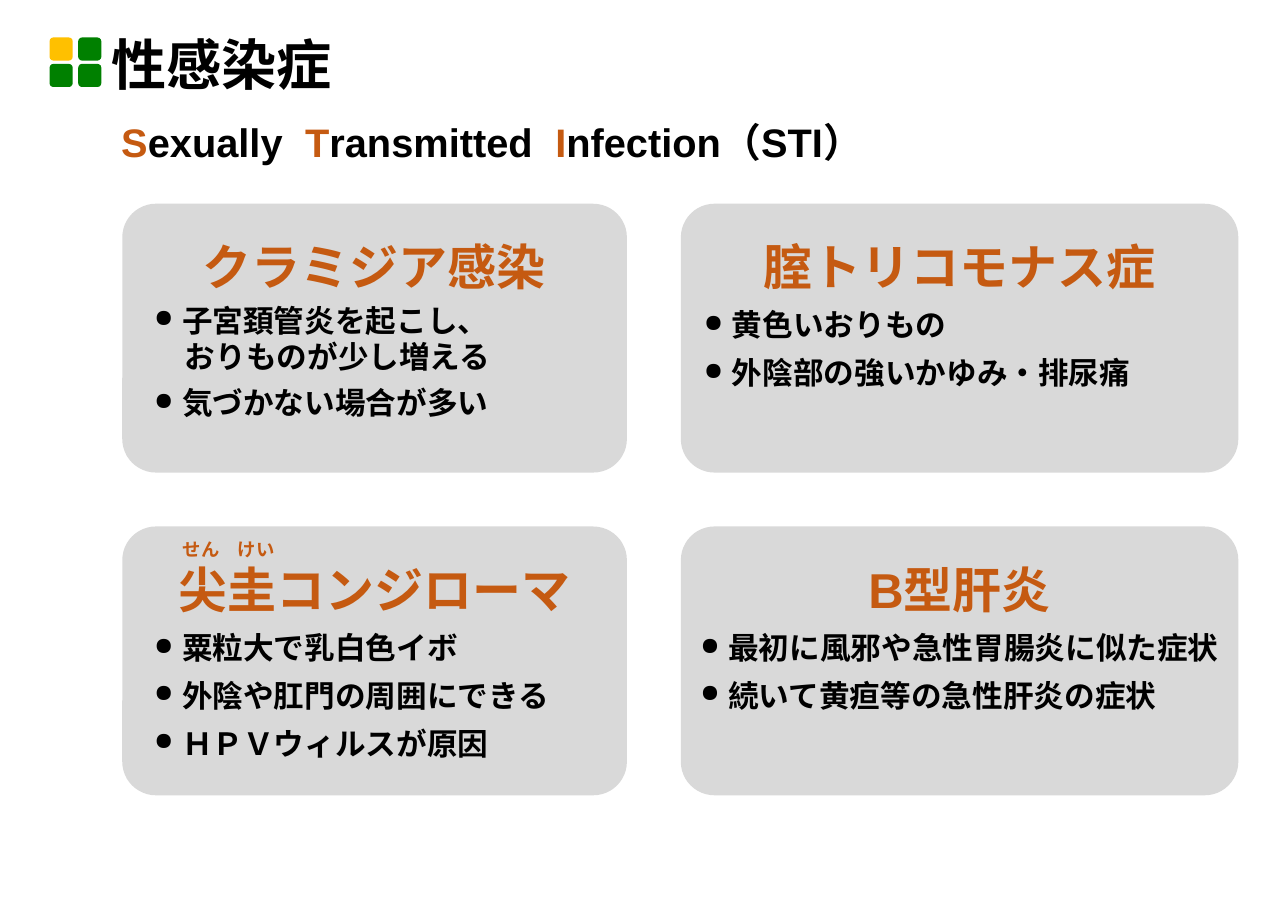
from dataclasses import dataclass

from lxml.etree import SubElement
from pptx import Presentation
from pptx.dml.color import RGBColor
from pptx.enum.shapes import MSO_SHAPE as Shape
from pptx.enum.text import MSO_ANCHOR as Anchor, MSO_AUTO_SIZE as Fit, PP_ALIGN as Align
from pptx.oxml.ns import qn
from pptx.util import Inches, Pt


@dataclass(frozen=True)
class Theme:
    ink: str = "000000"
    accent: str = "C55A11"
    card: str = "D9D9D9"
    gold: str = "FFC000"
    green: str = "008000"
    font: str = "Arial"
    kanji: str = "Noto Sans CJK JP"
    title: int = 36
    head: int = 32
    lead: int = 26
    item: int = 20
    ruby: int = 12


THEME = Theme()
ROWS = (1.85, 4.78)
# left, width and side inset of each column
COLS = ((1.11, 4.58, 0.2), (6.18, 5.06, 0.12))
# heading, then items as (text, line spacing, space before)
CARDS = (
    (("クラミジア感染", (
        (" 子宮頚管炎を起こし、\n　おりものが少し増える", 1, 4),
        (" 気づかない場合が多い", 1, 6))),
     ("腟トリコモナス症", (
         (" 黄色いおりもの", 1.3, 0),
         (" 外陰部の強いかゆみ・排尿痛", 1.3, 0)))),
    (("尖圭コンジローマ", (
        (" 粟粒大で乳白色イボ", 1.3, 0),
        (" 外陰や肛門の周囲にできる", 1.3, 0),
        (" ＨＰＶウィルスが原因", 1.3, 0))),
     ("B型肝炎", (
         (" 最初に風邪や急性胃腸炎に似た症状", 1.3, 0),
         (" 続いて黄疸等の急性肝炎の症状", 1.3, 0)))),
)


def place(shape, left, top, width, height):
    shape.left, shape.top = Inches(left), Inches(top)
    shape.width, shape.height = Inches(width), Inches(height)


def setup(frame, anchor=Anchor.TOP, side=0.1, wrap=True):
    frame.auto_size = Fit.NONE
    frame.word_wrap = wrap
    frame.vertical_anchor = anchor
    frame.margin_left = frame.margin_right = Inches(side)
    frame.margin_top = frame.margin_bottom = Inches(0.05)


def write(para, text, size, color=THEME.ink, font=THEME.font, align=Align.LEFT,
          line=1, before=0, bullet=None):
    """Format a paragraph; text is a string or a list of (string, colour)."""
    para.alignment, para.line_spacing = align, line
    para.space_before, para.space_after = Pt(before), Pt(0)
    props = para._p.get_or_add_pPr()
    props.set("marL", "0")
    props.set("indent", "0")
    if bullet:
        SubElement(props, qn("a:buSzPct"), val="80000")
        SubElement(props, qn("a:buChar"), char=bullet)
    else:
        SubElement(props, qn("a:buNone"))
    for part, tint in [(text, color)] if isinstance(text, str) else text:
        for row, piece in enumerate(part.split("\n")):
            if row:
                para.add_line_break()
            run = para.add_run()
            run.text = piece
            face = run.font
            face.name, face.size, face.bold = font, Pt(size), True
            face.color.rgb = RGBColor.from_string(tint)
            SubElement(run._r.get_or_add_rPr(), qn("a:ea"), typeface=font)


def block(slide, left, top, width, height, color):
    shape = slide.shapes.add_shape(
        Shape.ROUNDED_RECTANGLE, Inches(left), Inches(top), Inches(width), Inches(height))
    shape.shadow.inherit = False
    shape.fill.solid()
    shape.fill.fore_color.rgb = RGBColor.from_string(color)
    shape.line.fill.background()
    return shape


def mark(slide, left, top, side=0.21, step_x=0.26, step_y=0.24):
    """Draw the two-by-two squares beside the title."""
    for n in range(4):
        row, col = divmod(n, 2)
        block(slide, left + col * step_x, top + row * step_y, side, side,
              THEME.green if n else THEME.gold)


def header(slide, left, top):
    mark(slide, left, top)
    title, lead = slide.placeholders
    place(title, left + 0.46, top - 0.07, 9.92, 0.68)
    setup(title.text_frame, Anchor.MIDDLE)
    write(title.text_frame.paragraphs[0], "性感染症", THEME.title,
          font=THEME.kanji, line=0.9)
    place(lead, left + 0.55, top + 0.71, 7.34, 0.47)
    setup(lead.text_frame, Anchor.MIDDLE)
    write(lead.text_frame.paragraphs[0], [
        ("S", THEME.accent), ("exually  ", THEME.ink),
        ("T", THEME.accent), ("ransmitted  ", THEME.ink),
        ("I", THEME.accent), ("nfection（STI）", THEME.ink)], THEME.lead)


def card(slide, left, top, width, height, side, head, items):
    shape = block(slide, left, top, width, height, THEME.card)
    shape.adjustments[0] = 0.125
    frame = shape.text_frame
    setup(frame, side=side, wrap=False)
    write(frame.paragraphs[0], head, THEME.head, color=THEME.accent,
          align=Align.CENTER, line=1.3)
    for text, line, before in items:
        write(frame.add_paragraph(), text, THEME.item, line=line,
              before=before, bullet="●")


def ruby(slide, left, top):
    """Set the reading above the first two characters of a heading."""
    box = slide.shapes.add_textbox(Inches(left), Inches(top), Inches(1.42), Inches(0.3))
    setup(box.text_frame)
    write(box.text_frame.paragraphs[0], "せん　けい", THEME.ruby, color=THEME.accent)


def main():
    deck = Presentation()
    deck.slide_width, deck.slide_height = Inches(11.69), Inches(8.27)
    slide = deck.slides.add_slide(deck.slide_layouts[1])
    header(slide, 0.45, 0.34)
    for top, line in zip(ROWS, CARDS):
        for (left, width, side), (head, items) in zip(COLS, line):
            card(slide, left, top, width, 2.44, side, head, items)
    ruby(slide, COLS[0][0] + 0.45, ROWS[1] + 0.06)
    deck.save("out.pptx")


if __name__ == "__main__":
    main()
